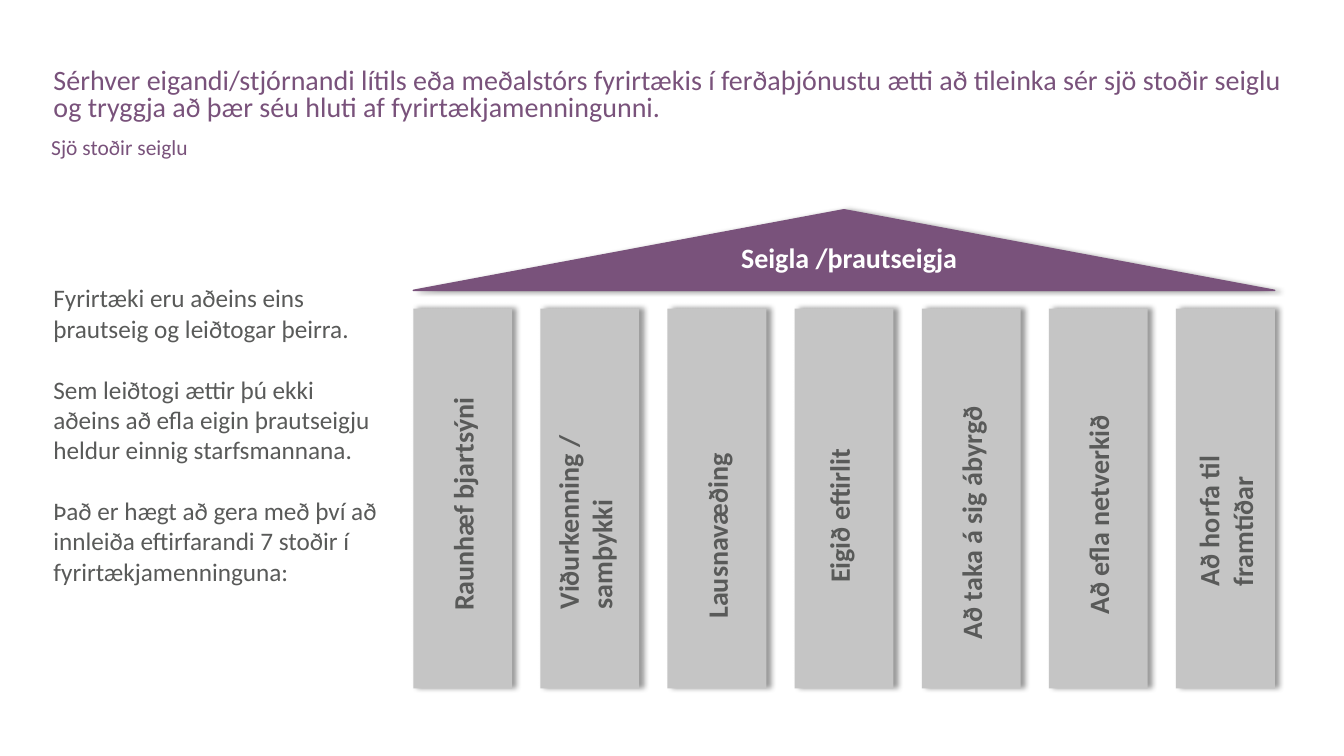
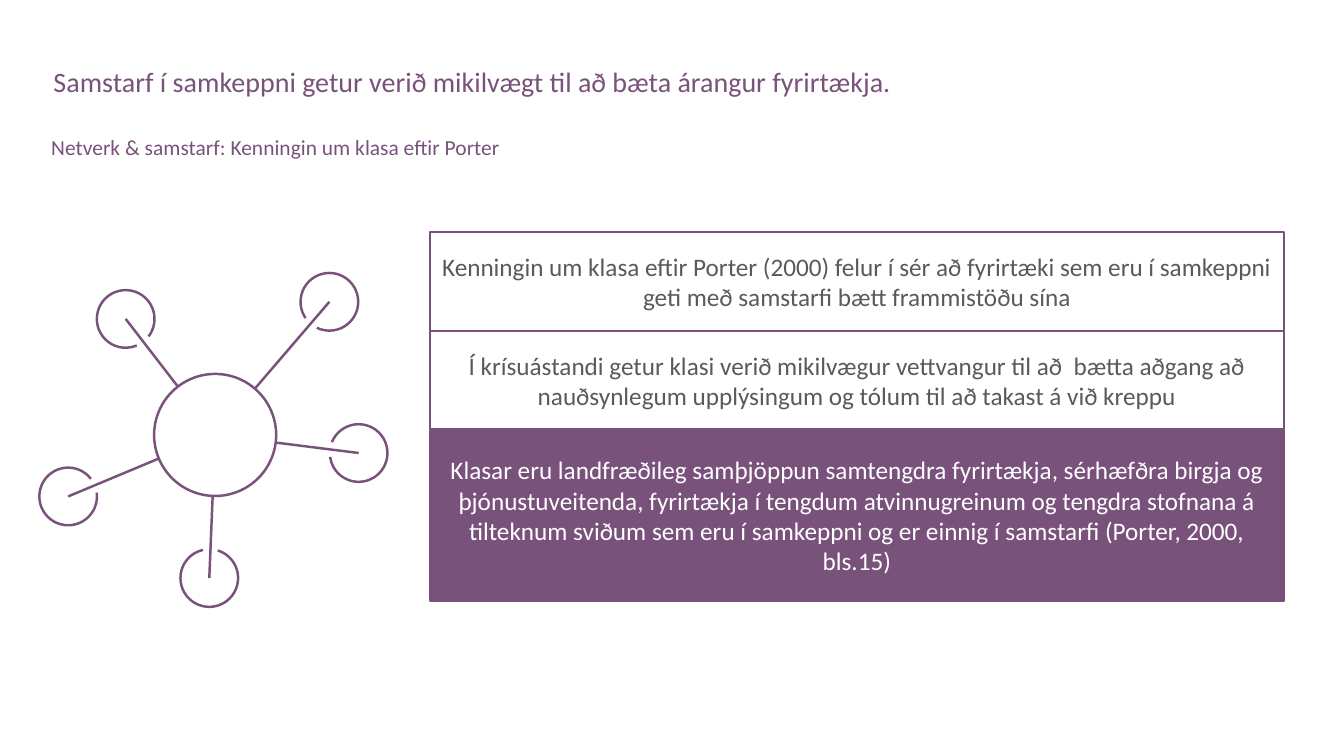
import dataclasses
import math

import lxml.etree
import pptx
import pptx.dml.color
import pptx.enum.shapes
import pptx.enum.text
import pptx.oxml.ns
import pptx.util

SHAPE = pptx.enum.shapes.MSO_SHAPE
ALIGN = pptx.enum.text.PP_ALIGN
ANCHOR = pptx.enum.text.MSO_ANCHOR
qn = pptx.oxml.ns.qn


@dataclasses.dataclass(frozen=True)
class Theme:
    """Colours, font and type sizes of the deck."""
    plum: str = "79527B"
    ink: str = "595A59"
    stone: str = "C5C5C5"
    white: str = "FFFFFF"
    black: str = "000000"
    font: str = "Calibri"
    head: float = 20
    sub: float = 15.3
    body: float = 18
    rule: float = 1.5
    wire: float = 1.75


THEME = Theme()

LEAD = [
    "Fyrirtæki eru aðeins eins þrautseig og leiðtogar þeirra.",
    "Sem leiðtogi ættir þú ekki aðeins að efla eigin þrautseigju heldur einnig starfsmannana.",
    "Það er hægt að gera með því að innleiða eftirfarandi 7 stoðir í fyrirtækjamenninguna:",
]

# Text, length, lines, shift right, shift down
PILLARS = [
    ("Raunhæf bjartsýni", 169.5, 1, 0, 2.6),
    ("Viðurkenning / samþykki", 152.6, 2, -3.6, 10.1),
    ("Lausnavæðing", 180.7, 1, 0, 2.6),
    ("Eigið eftirlit", 146.9, 1, -3.6, -6.1),
    ("Að taka á sig ábyrgð", 210.2, 1, 0, 2.6),
    ("Að efla netverkið", 180.7, 1, 0, -0.3),
    ("Að horfa til framtíðar", 139.7, 2, 0, 0),
]

NODES = [(207.3, 20.4), (61.8, 32.6), (20.7, 159.4), (121.5, 217.7), (228.2, 128.4)]

CLAIMS = [
    ("Kenningin um klasa eftir Porter (2000) felur í sér að fyrirtæki sem eru í "
     "samkeppni geti með samstarfi bætt frammistöðu sína", 70.6, False),
    ("Í krísuástandi getur klasi verið mikilvægur vettvangur til að  bætta aðgang að "
     "nauðsynlegum upplýsingum og tólum til að takast á við kreppu", 70.6, False),
    ("Klasar eru landfræðileg samþjöppun samtengdra fyrirtækja, sérhæfðra birgja og "
     "þjónustuveitenda, fyrirtækja í tengdum atvinnugreinum og tengdra stofnana á "
     "tilteknum sviðum sem eru í samkeppni og er einnig í samstarfi (Porter, 2000, "
     "bls.15)", 122.4, True),
]


def rgb(code):
    """Turn a hex code into a colour."""
    return pptx.dml.color.RGBColor.from_string(code)


def pts(*nums):
    """Turn numbers into lengths in points."""
    return [pptx.util.Pt(num) for num in nums]


def write(shape, text, size=THEME.body, tint=THEME.ink, bold=False,
          align=ALIGN.LEFT, anchor=ANCHOR.TOP, pitch=None, gap=0):
    """Fill a shape with one or more formatted paragraphs."""
    frame = shape.text_frame
    frame.word_wrap = True
    frame.auto_size = pptx.enum.text.MSO_AUTO_SIZE.NONE
    frame.vertical_anchor = anchor
    frame.margin_left, frame.margin_right = pts(7.2, 7.2)
    frame.margin_top, frame.margin_bottom = pts(3.6, 3.6)
    for num, line in enumerate([text] if isinstance(text, str) else text):
        para = frame.add_paragraph() if num else frame.paragraphs[0]
        para.alignment = align
        para.space_before = pptx.util.Pt(gap if num else 0)
        if pitch:
            para.line_spacing = pitch
        run = para.add_run()
        run.text = line
        run.font.name = THEME.font
        run.font.size = pptx.util.Pt(size)
        run.font.bold = bold
        run.font.color.rgb = rgb(tint)
    return shape


def label(slide, box, text, **form):
    """Add a text box."""
    return write(slide.shapes.add_textbox(*pts(*box)), text, **form)


def block(shapes, kind, box, fill=None, edge=None, width=1):
    """Add a plain preset shape."""
    shape = shapes.add_shape(kind, *pts(*box))
    shape.shadow.inherit = False
    if fill:
        shape.fill.solid()
        shape.fill.fore_color.rgb = rgb(fill)
    else:
        shape.fill.background()
    if edge:
        shape.line.color.rgb = rgb(edge)
        shape.line.width = pptx.util.Pt(width)
    else:
        shape.line.fill.background()
    return shape


def shade(shape):
    """Cast a soft shadow to the right."""
    cast = lxml.etree.SubElement(
        shape.element.spPr.find(qn("a:effectLst")), qn("a:outerShdw"),
        blurRad=str(pptx.util.Pt(4)), dist=str(pptx.util.Pt(3)), dir="0",
        algn="l", rotWithShape="0")
    tint = lxml.etree.SubElement(cast, qn("a:srgbClr"), val=THEME.black)
    lxml.etree.SubElement(tint, qn("a:alpha"), val="40000")


def start(deck, title, sub, pitch):
    """Add a slide with its title and subtitle."""
    slide = deck.slides.add_slide(deck.slide_layouts[5])
    head = slide.shapes.title
    head.left, head.top, head.width, head.height = pts(31, 45.4, 902.9, 46.1)
    write(head, title, size=THEME.head, tint=THEME.plum, pitch=pitch)
    label(slide, (29.5, 97.2, 904.3, 20.2), sub, size=THEME.sub,
          tint=THEME.plum, pitch=0.7)
    return slide


def temple(slide, box):
    """Draw a roof carried by evenly spaced, labelled pillars."""
    left, top, wide, high = box
    roof, base, thick = 57.6, 70.6, 70.6
    shade(block(slide.shapes, SHAPE.ISOSCELES_TRIANGLE, (left, top, wide, roof),
                THEME.plum, THEME.plum))
    label(slide, (left + 208.1, top + 18.7, 206.6, 31.7), "Seigla /þrautseigja",
          size=THEME.head, tint=THEME.white, bold=True, align=ALIGN.CENTER)
    step = (wide - thick) / (len(PILLARS) - 1)
    tall = high - base
    for num, (text, span, lines, right, down) in enumerate(PILLARS):
        side = left + num * step
        shade(block(slide.shapes, SHAPE.RECTANGLE, (side, top + base, thick, tall),
                    THEME.stone))
        deep = 7.3 + 24.2 * lines
        mid_x = side + thick / 2 + right
        mid_y = top + base + tall / 2 + down
        name = label(slide, (mid_x - span / 2, mid_y - deep / 2, span, deep), text,
                     size=THEME.head, bold=True)
        name.rotation = 270


def network(slide, box):
    """Draw a hub wired to open rings that face it."""
    left, top, wide, high = box
    shapes = slide.shapes.add_group_shape().shapes
    hub_x, hub_y, big, small, slit = left + 125.7, top + 115.5, 43.6, 20.6, 15
    block(shapes, SHAPE.OVAL, (hub_x - big, hub_y - big, 2 * big, 2 * big),
          edge=THEME.plum, width=THEME.wire)
    for off_x, off_y in NODES:
        mid_x, mid_y = left + off_x, top + off_y
        turn = math.atan2(hub_y - mid_y, hub_x - mid_x)
        ring = block(shapes, SHAPE.ARC,
                     (mid_x - small, mid_y - small, 2 * small, 2 * small),
                     edge=THEME.plum, width=THEME.wire)
        for num, swing in enumerate((slit, -slit)):
            ring.adjustments[num] = (math.degrees(turn) + swing) % 360 * 0.6
        wire = shapes.add_connector(
            pptx.enum.shapes.MSO_CONNECTOR.STRAIGHT,
            *pts(mid_x, mid_y, hub_x - big * math.cos(turn),
                 hub_y - big * math.sin(turn)))
        wire.line.color.rgb = rgb(THEME.plum)
        wire.line.width = pptx.util.Pt(THEME.wire)
        lxml.etree.SubElement(wire.element.spPr, qn("a:effectLst"))


def stack(slide, box):
    """Pile the claims up as touching panels, the last one solid."""
    left, top, wide, high = box
    for text, tall, solid in CLAIMS:
        panel = block(slide.shapes, SHAPE.RECTANGLE, (left, top, wide, tall),
                      THEME.plum if solid else None, THEME.plum, THEME.rule)
        write(panel, text, tint=THEME.white if solid else THEME.ink,
              align=ALIGN.CENTER, anchor=ANCHOR.MIDDLE)
        top += tall


def main():
    """Build and save the deck."""
    deck = pptx.Presentation()
    deck.slide_width, deck.slide_height = pts(960, 540)

    slide = start(
        deck, "Sérhver eigandi/stjórnandi lítils eða meðalstórs fyrirtækis í "
        "ferðaþjónustu ætti að tileinka sér sjö stoðir seiglu og tryggja að þær séu "
        "hluti af fyrirtækjamenningunni.", "Sjö stoðir seiglu", 0.8)
    label(slide, (31, 128.9, 251.3, 362.9), LEAD, anchor=ANCHOR.MIDDLE, gap=22)
    temple(slide, (295.2, 149.8, 615.4, 342))

    slide = start(
        deck, "Samstarf í samkeppni getur verið mikilvægt til að bæta árangur "
        "fyrirtækja.", "Netverk & samstarf: Kenningin um klasa eftir Porter", 0.9)
    network(slide, (28, 195.2, 248.8, 238.3))
    stack(slide, (307.2, 165.6, 609.8, 263.6))

    deck.save("out.pptx")


if __name__ == "__main__":
    main()
